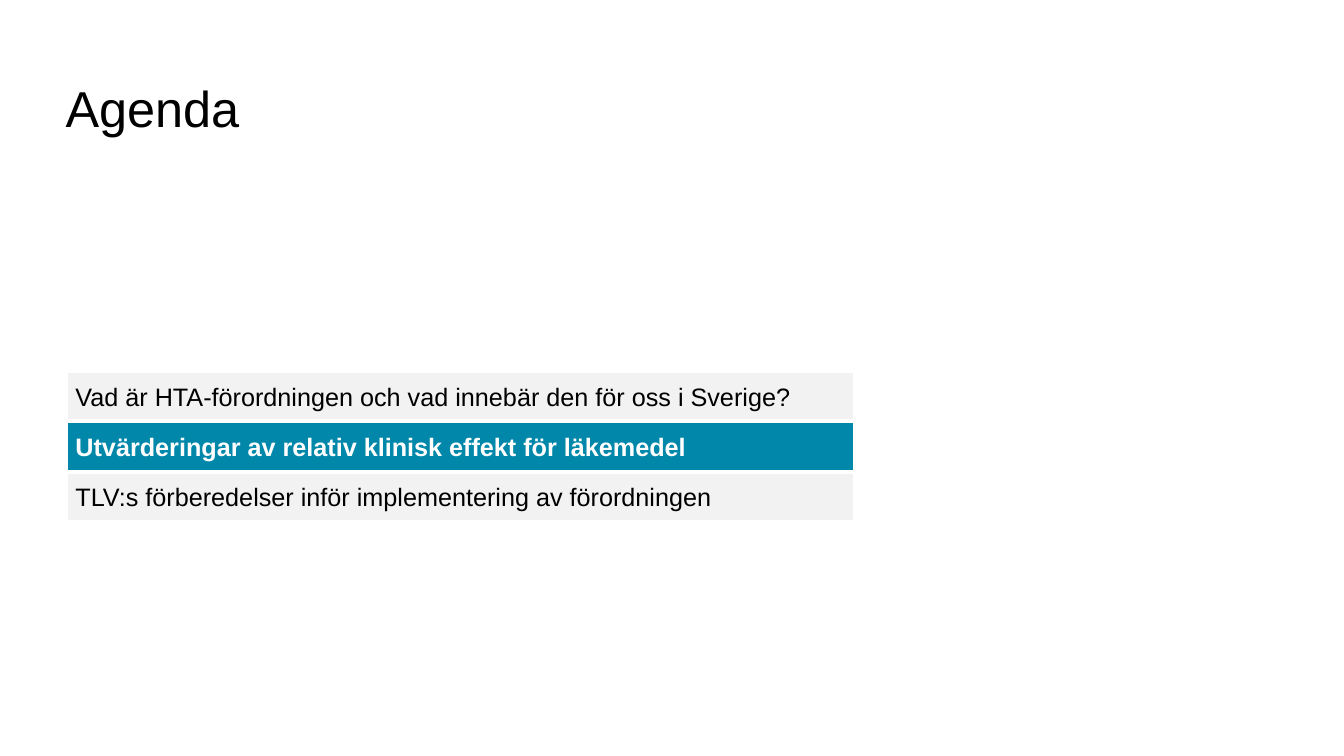
from dataclasses import dataclass

from pptx import Presentation
from pptx.dml.color import RGBColor
from pptx.enum.shapes import MSO_SHAPE as Preset
from pptx.enum.text import MSO_ANCHOR as Anchor, PP_ALIGN as Align
from pptx.slide import Slide
from pptx.text.text import TextFrame
from pptx.util import Inches, Pt

LEFT = 0.65
BAR_TOP, BAR_WIDTH, BAR_HEIGHT = 3.68, 7.83, 0.5


@dataclass
class AgendaItem:
    text: str
    active: bool = False


AGENDA = [
    AgendaItem("Vad är HTA-förordningen och vad innebär den för oss i Sverige?"),
    AgendaItem("Utvärderingar av relativ klinisk effekt för läkemedel", active=True),
    AgendaItem("TLV:s förberedelser inför implementering av förordningen"),
]


def rgb(code: str) -> RGBColor:
    return RGBColor.from_string(code)


def write(frame: TextFrame, text: str, size: float, color: str, bold: bool = False) -> None:
    frame.vertical_anchor = Anchor.MIDDLE
    para = frame.paragraphs[0]
    para.alignment = Align.LEFT
    span = para.add_run()
    span.text = text
    span.font.name = "Arial"
    span.font.size = Pt(size)
    span.font.bold = bold
    span.font.color.rgb = rgb(color)


def set_margins(frame: TextFrame, left: float, right: float, vertical: float) -> None:
    frame.margin_left, frame.margin_right = Inches(left), Inches(right)
    frame.margin_top = frame.margin_bottom = Inches(vertical)


def add_title(page: Slide, text: str) -> None:
    title = page.shapes.title
    title.left, title.top = Inches(LEFT), Inches(0.66)
    title.width, title.height = Inches(12.03), Inches(0.81)
    set_margins(title.text_frame, 0, 0, 0)
    write(title.text_frame, text, 36, "000000")


def add_bar(page: Slide, item: AgendaItem, top: float) -> None:
    bar = page.shapes.add_shape(
        Preset.RECTANGLE, Inches(LEFT), Inches(top), Inches(BAR_WIDTH), Inches(BAR_HEIGHT)
    )
    bar.shadow.inherit = False
    bar.fill.solid()
    bar.fill.fore_color.rgb = rgb("0087A9" if item.active else "F2F2F2")
    bar.line.color.rgb = rgb("FFFFFF")
    bar.line.width = Pt(3)
    frame = bar.text_frame
    frame.word_wrap = False
    set_margins(frame, 0.1, 0, 0.1)
    write(frame, item.text, 18, "FFFFFF" if item.active else "000000", item.active)


def main() -> None:
    deck = Presentation()
    deck.slide_width, deck.slide_height = Inches(13.33), Inches(7.5)
    page = deck.slides.add_slide(deck.slide_layouts[5])

    # Title
    add_title(page, "Agenda")

    # Agenda bars, stacked edge to edge
    for index, item in enumerate(AGENDA):
        add_bar(page, item, BAR_TOP + index * BAR_HEIGHT)

    deck.save("out.pptx")


if __name__ == "__main__":
    main()
